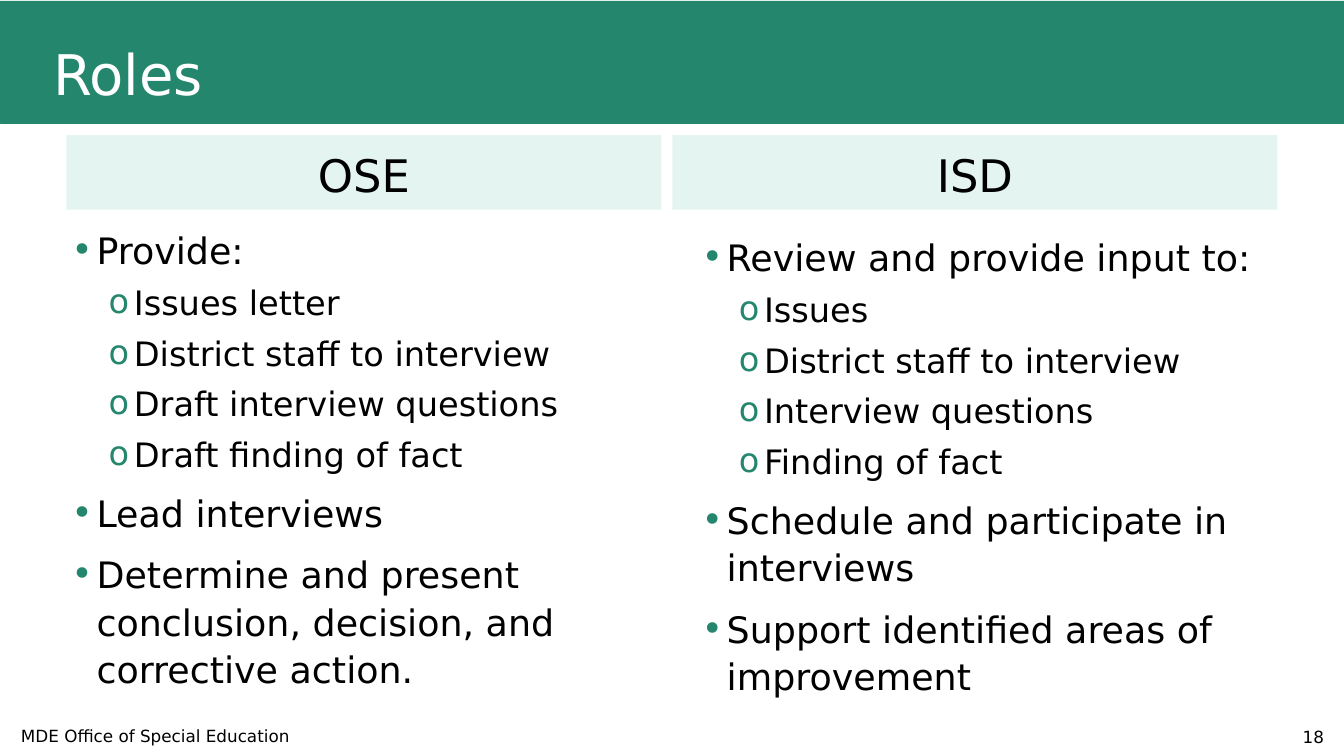
from pptx import Presentation
from pptx.dml.color import RGBColor
from pptx.enum.shapes import MSO_SHAPE as Shape
from pptx.enum.text import MSO_ANCHOR as Anchor, PP_ALIGN as Align
from pptx.oxml.ns import qn
from pptx.util import Inches, Pt
from lxml.etree import SubElement

GREEN = RGBColor(0x25, 0x86, 0x6E)
MINT = RGBColor(0xE4, 0xF4, 0xF0)
WHITE = RGBColor(0xFF, 0xFF, 0xFF)
BLACK = RGBColor(0, 0, 0)
FONT = "DejaVu Sans"

# Per list level: mark, indent in inches, text size, space before
LEVELS = [("•", 0.25, 26, 10), ("o", 0.62, 24, 5)]

OSE = [
    (0, "Provide:"),
    (1, "Issues letter"),
    (1, "District staff to interview"),
    (1, "Draft interview questions"),
    (1, "Draft finding of fact"),
    (0, "Lead interviews"),
    (0, "Determine and present conclusion, decision, and corrective action."),
]
ISD = [
    (0, "Review and provide input to:"),
    (1, "Issues"),
    (1, "District staff to interview"),
    (1, "Interview questions"),
    (1, "Finding of fact"),
    (0, "Schedule and participate in interviews"),
    (0, "Support identified areas of improvement"),
]


def write(para, text, size=12, color=BLACK, align=Align.LEFT, line=1.0, before=0):
    para.alignment = align
    para.line_spacing = line
    para.space_before = Pt(before)
    run = para.add_run()
    run.text = text
    run.font.name = FONT
    run.font.size = Pt(size)
    run.font.color.rgb = color


def add_text(slide, box, anchor=Anchor.MIDDLE):
    frame = slide.shapes.add_textbox(*map(Inches, box)).text_frame
    frame.word_wrap = True
    frame.vertical_anchor = anchor
    return frame


def add_rect(slide, box, fill):
    rect = slide.shapes.add_shape(Shape.RECTANGLE, *map(Inches, box))
    rect.shadow.inherit = False
    rect.fill.solid()
    rect.fill.fore_color.rgb = fill
    rect.line.fill.background()
    return rect


def add_mark(para, level):
    mark, indent = LEVELS[level][:2]
    para.level = level
    props = para._p.get_or_add_pPr()
    props.set("marL", str(Inches(indent)))
    props.set("indent", str(Inches(-0.25)))
    color = SubElement(props, qn("a:buClr"))
    SubElement(color, qn("a:srgbClr")).set("val", str(GREEN))
    SubElement(props, qn("a:buFont")).set("typeface", FONT)
    SubElement(props, qn("a:buChar")).set("char", mark)


def add_title(slide, box, text):
    left, top, width, height = box
    band = add_rect(slide, box, GREEN)
    band.line.color.rgb = GREEN
    band.line.width = Pt(0.5)
    frame = add_text(slide, (left + 0.43, top + 0.3, width - 0.91, height - 0.3))
    write(frame.paragraphs[0], text, size=40, color=WHITE, line=0.9)


def add_head(slide, box, text):
    frame = add_rect(slide, box, MINT).text_frame
    frame.word_wrap = True
    frame.vertical_anchor = Anchor.MIDDLE
    write(frame.paragraphs[0], text, size=32, align=Align.CENTER, line=1.08)


def add_list(slide, box, items):
    frame = add_text(slide, box, Anchor.TOP)
    for i, (level, text) in enumerate(items):
        para = frame.add_paragraph() if i else frame.paragraphs[0]
        add_mark(para, level)
        size, before = LEVELS[level][2:]
        write(para, text, size=size, line=1.08, before=before if i else 0)


def add_foot(slide, box, text, number):
    left, top, width, height = box
    note = add_text(slide, (left, top, 4.5, height))
    write(note.paragraphs[0], text)
    page = add_text(slide, (left + width - 3, top + 0.01, 3, height))
    write(page.paragraphs[0], number, align=Align.RIGHT)


def main():
    deck = Presentation()
    deck.slide_width, deck.slide_height = Inches(13.33), Inches(7.5)
    slide = deck.slides.add_slide(deck.slide_layouts[6])

    # Title band
    add_title(slide, (0, 0.01, 13.33, 1.21), "Roles")
    # Left column
    add_head(slide, (0.66, 1.34, 5.9, 0.74), "OSE")
    add_list(slide, (0.61, 2.18, 6, 4.7), OSE)
    # Right column
    add_head(slide, (6.67, 1.34, 6, 0.74), "ISD")
    add_list(slide, (6.86, 2.25, 5.9, 4.7), ISD)
    # Footer
    add_foot(slide, (0.11, 7.1, 13.12, 0.4), "MDE Office of Special Education", "18")

    deck.save("out.pptx")


if __name__ == "__main__":
    main()
